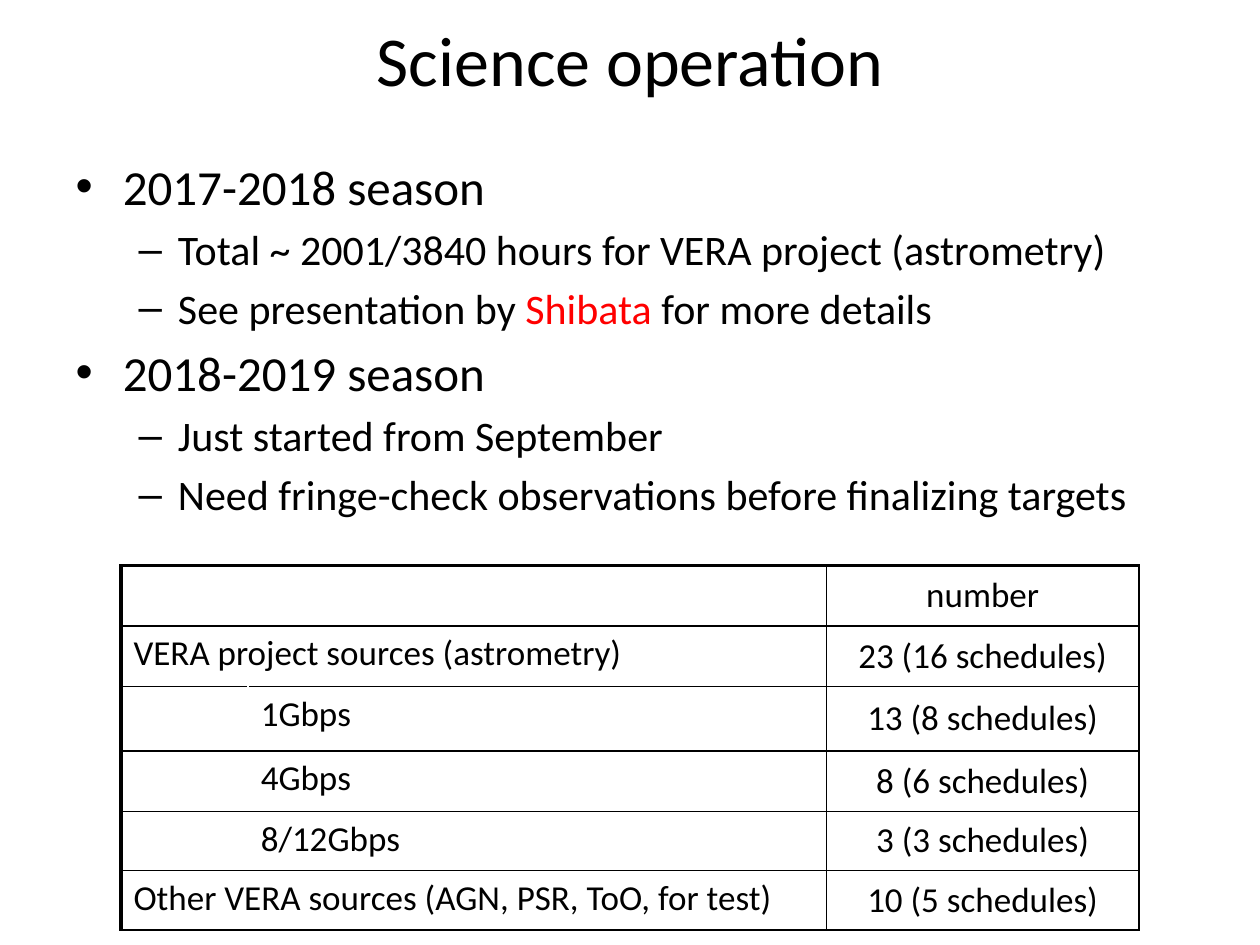
from dataclasses import dataclass

from lxml.etree import SubElement
from pptx import Presentation
from pptx.dml.color import RGBColor
from pptx.enum.text import MSO_ANCHOR, PP_ALIGN
from pptx.oxml.ns import qn
from pptx.util import Inches, Pt


@dataclass(frozen=True)
class Theme:
    """Hold the colours, type sizes and line widths."""
    font: str = "Calibri"
    ink: str = "000000"
    paper: str = "FFFFFF"
    accent: str = "FF0000"
    title: int = 40
    levels: tuple = (28, 24)
    cell: int = 20
    thin: float = 1
    thick: float = 2.25


THEME = Theme()
WIDE, HIGH = 10, 7.5
COLS = (1.01, 4.59, 2.48)
ROWS = (0.48, 0.48, 0.51, 0.48, 0.47, 0.47)
POINTS = (
    (0, ("2017-2018 season",)),
    (1, ("Total ~ 2001/3840 hours for VERA project (astrometry)",)),
    (1, ("See presentation by ", "Shibata", " for more details")),
    (0, ("2018-2019 season",)),
    (1, ("Just started from September",)),
    (1, ("Need fringe-check observations before finalizing targets",)),
)
COUNTS = (
    ("", "", "number"),
    ("VERA project sources (astrometry)", "", "23 (16 schedules)"),
    ("", "1Gbps", "13 (8 schedules)"),
    ("", "4Gbps", "8 (6 schedules)"),
    ("", "8/12Gbps", "3 (3 schedules)"),
    ("Other VERA sources (AGN, PSR, ToO, for test)", "", "10 (5 schedules)"),
)


def place(shape, left, top, width, height):
    """Set a shape's box in inches."""
    shape.left, shape.top = Inches(left), Inches(top)
    shape.width, shape.height = Inches(width), Inches(height)


def style(font, size, color=THEME.ink):
    """Set the face, size and colour of a font."""
    font.name, font.size = THEME.font, Pt(size)
    font.color.rgb = RGBColor.from_string(color)


def add_title(slide, text):
    """Fill the title placeholder."""
    title = slide.shapes.title
    place(title, 0, 0, WIDE, 0.93)
    title.text_frame.text = text
    style(title.text_frame.paragraphs[0].font, THEME.title)


def add_list(slide, points):
    """Fill the body placeholder, with every second run in the accent colour."""
    body = slide.placeholders[1]
    place(body, 0.5, 1.19, 9.5, HIGH - 1.19)
    frame = body.text_frame
    for row, (level, parts) in enumerate(points):
        line = frame.add_paragraph() if row else frame.paragraphs[0]
        line.level = level
        style(line.font, THEME.levels[level])
        for spot, part in enumerate(parts):
            run = line.add_run()
            run.text = part
            style(run.font, THEME.levels[level],
                  THEME.accent if spot % 2 else THEME.ink)


def add_edge(cell, side, color, width):
    """Draw one border of a cell."""
    edge = SubElement(cell._tc.get_or_add_tcPr(), qn(f"a:ln{side}"),
                      w=str(Pt(width)))
    fill = SubElement(edge, qn("a:solidFill"))
    SubElement(fill, qn("a:srgbClr"), val=color)


def fill_cell(cell, text, row, col, split):
    """Write a cell and draw its borders."""
    edges = {
        "L": (THEME.paper if split and col == 1 else THEME.ink,
              THEME.thin if col else THEME.thick),
        "R": (THEME.paper if split and col == 0 else THEME.ink, THEME.thin),
        "T": (THEME.ink, THEME.thin if row else THEME.thick),
        "B": (THEME.ink, THEME.thin),
    }
    for side, (color, width) in edges.items():
        add_edge(cell, side, color, width)
    cell.fill.background()
    cell.text = text
    line = cell.text_frame.paragraphs[0]
    style(line.font, THEME.cell)
    if col == 2:
        line.alignment = PP_ALIGN.CENTER
        cell.vertical_anchor = MSO_ANCHOR.MIDDLE


def add_counts(slide, rows):
    """Add the table, joining label cells in rows without a data rate."""
    frame = slide.shapes.add_table(
        len(ROWS), len(COLS), Inches(0.96), Inches(4.49),
        Inches(sum(COLS)), Inches(sum(ROWS)))
    table = frame.table
    table.first_row = table.horz_banding = False
    for col, width in zip(table.columns, COLS):
        col.width = Inches(width)
    for row, height in zip(table.rows, ROWS):
        row.height = Inches(height)
    for row, texts in enumerate(rows):
        split = bool(texts[1])
        if not split:
            table.cell(row, 0).merge(table.cell(row, 1))
        for col, text in enumerate(texts):
            fill_cell(table.cell(row, col), text, row, col, split)


def main():
    """Build and save the slide."""
    deck = Presentation()
    deck.slide_width, deck.slide_height = Inches(WIDE), Inches(HIGH)
    slide = deck.slides.add_slide(deck.slide_layouts[1])
    add_title(slide, "Science operation")
    add_list(slide, POINTS)
    add_counts(slide, COUNTS)
    deck.save("out.pptx")


if __name__ == "__main__":
    main()
